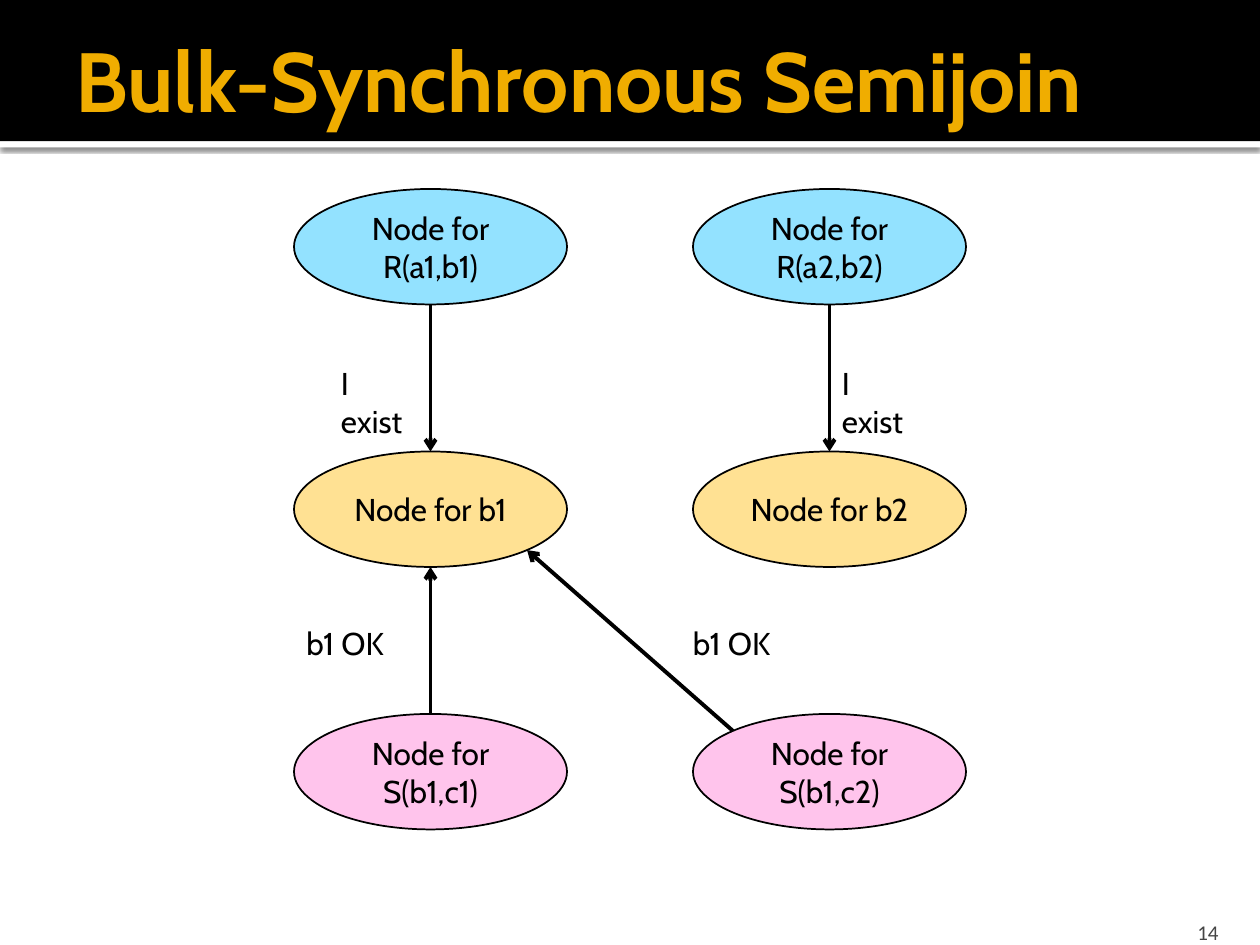
import math

import pptx
import pptx.dml.color
import pptx.enum.shapes
import pptx.enum.text
import pptx.oxml
import pptx.oxml.ns
import pptx.util

RGBColor = pptx.dml.color.RGBColor
Shapes = pptx.enum.shapes.MSO_SHAPE
Align = pptx.enum.text.PP_ALIGN
Anchor = pptx.enum.text.MSO_ANCHOR

BLACK = RGBColor(0x00, 0x00, 0x00)
WHITE = RGBColor(0xFF, 0xFF, 0xFF)
GOLD = RGBColor(0xF0, 0xAD, 0x00)
GRAY = RGBColor(0x45, 0x45, 0x45)
BLUE = RGBColor(0x93, 0xE2, 0xFF)
YELLOW = RGBColor(0xFF, 0xE1, 0x93)
PINK = RGBColor(0xFF, 0xC4, 0xEC)

UNIT = pptx.util.Inches(1) / 12  # the slide is a grid of 120 columns by 90 rows
NODE_WIDTH, NODE_HEIGHT = 26, 11
NODE_COLUMNS = (28, 66)
NODE_ROWS = (18, 43, 68)
TITLE_HEIGHT = 13.44


def grid(*units):
    return [round(unit * UNIT) for unit in units]


def node_point(column, row, degrees):
    """Point on a node's outline, clockwise from its right end."""
    angle = math.radians(degrees)
    return (NODE_COLUMNS[column] + NODE_WIDTH / 2 * (1 + math.cos(angle)),
            NODE_ROWS[row] + NODE_HEIGHT / 2 * (1 + math.sin(angle)))


class DiagramSlide:
    font = "Cabin"
    size = 18

    def __init__(self, presentation):
        self.slide = presentation.slides.add_slide(presentation.slide_layouts[5])
        self.shapes = self.slide.shapes

    def add_text(self, frame, text, size=None, color=BLACK, font=None,
                 bold=False, align=Align.LEFT):
        paragraph = frame.paragraphs[0]
        paragraph.alignment = align
        run = paragraph.add_run()
        run.text = text
        run.font.name = font or self.font
        run.font.size = pptx.util.Pt(size or self.size)
        run.font.bold = bold
        run.font.color.rgb = color

    def band(self, top, height, color):
        shape = self.shapes.add_shape(Shapes.RECTANGLE, *grid(0, top, 120, height))
        shape.shadow.inherit = False
        shape.fill.solid()
        shape.fill.fore_color.rgb = color
        shape.line.fill.background()
        return shape

    def shadowed_band(self, top, height, color):
        shape = self.band(top, height, color)
        effects = shape.element.spPr.find(pptx.oxml.ns.qn("a:effectLst"))
        effects.append(pptx.oxml.parse_xml(
            f'<a:outerShdw {pptx.oxml.ns.nsdecls("a")} blurRad="31750" dist="10160" '
            'dir="5400000" algn="tl" rotWithShape="0"><a:srgbClr val="000000">'
            '<a:alpha val="60000"/></a:srgbClr></a:outerShdw>'))

    def title(self, text):
        title = self.shapes.title
        self.shapes.element.append(title.element)  # in front of the bands
        title.left, title.top, title.width, title.height = grid(6, 2.04, 114, 11.04)
        frame = title.text_frame
        frame.vertical_anchor = Anchor.MIDDLE
        frame.margin_right = pptx.util.Inches(0.05)
        self.add_text(frame, text, size=48, color=GOLD, bold=True)

    def node(self, column, row, text, color):
        shape = self.shapes.add_shape(Shapes.OVAL, *grid(
            NODE_COLUMNS[column], NODE_ROWS[row], NODE_WIDTH, NODE_HEIGHT))
        shape.shadow.inherit = False
        shape.fill.solid()
        shape.fill.fore_color.rgb = color
        shape.line.color.rgb = BLACK
        shape.line.width = pptx.util.Pt(1)
        shape.text_frame.word_wrap = True
        shape.text_frame.vertical_anchor = Anchor.MIDDLE
        self.add_text(shape.text_frame, text, align=Align.CENTER)

    def arrow(self, start, end):
        connector = self.shapes.add_connector(
            pptx.enum.shapes.MSO_CONNECTOR.STRAIGHT, *grid(*start, *end))
        connector.line.color.rgb = BLACK
        connector.line.width = pptx.util.Pt(2.25)
        properties = connector.element.spPr
        namespace = pptx.oxml.ns.nsdecls("a")
        properties.find(pptx.oxml.ns.qn("a:ln")).append(
            pptx.oxml.parse_xml(f'<a:tailEnd {namespace} type="arrow"/>'))
        properties.append(pptx.oxml.parse_xml(f'<a:effectLst {namespace}/>'))

    def label(self, left, top, width, text):
        box = self.shapes.add_textbox(*grid(left, top, width, 4.8))
        box.text_frame.word_wrap = False
        box.text_frame.auto_size = pptx.enum.text.MSO_AUTO_SIZE.SHAPE_TO_FIT_TEXT
        self.add_text(box.text_frame, text)

    def page_number(self, text):
        box = self.shapes.add_textbox(*grid(107.64, 86.4, 9.6, 3.6))
        frame = box.text_frame
        frame.word_wrap = True
        frame.vertical_anchor = Anchor.BOTTOM
        frame.margin_bottom = 0
        self.add_text(frame, text, size=12, color=GRAY, font="Calibri", align=Align.RIGHT)


def main():
    presentation = pptx.Presentation()
    presentation.slide_width, presentation.slide_height = grid(120, 90)
    diagram = DiagramSlide(presentation)

    diagram.shadowed_band(TITLE_HEIGHT, 0.6, WHITE)
    diagram.band(0, TITLE_HEIGHT, BLACK)
    diagram.title("Bulk-Synchronous Semijoin")
    diagram.page_number("14")

    node_rows = (
        (BLUE, ("R(a1,b1)", "R(a2,b2)")),
        (YELLOW, ("b1", "b2")),
        (PINK, ("S(b1,c1)", "S(b1,c2)")),
    )
    for row, (color, names) in enumerate(node_rows):
        for column, name in enumerate(names):
            diagram.node(column, row, f"Node for {name}", color)

    for column in range(2):
        diagram.arrow(node_point(column, 0, 90), node_point(column, 1, 270))
    diagram.arrow(node_point(0, 2, 270), node_point(0, 1, 90))
    diagram.arrow(node_point(1, 2, 225), node_point(0, 1, 45))

    for left in (31.3, 79):
        diagram.label(left, 34.1, 9.6, "I exist")
    for left in (28, 64.8):
        diagram.label(left, 58.8, 10.1, "b1 OK")

    presentation.save("out.pptx")


if __name__ == "__main__":
    main()
